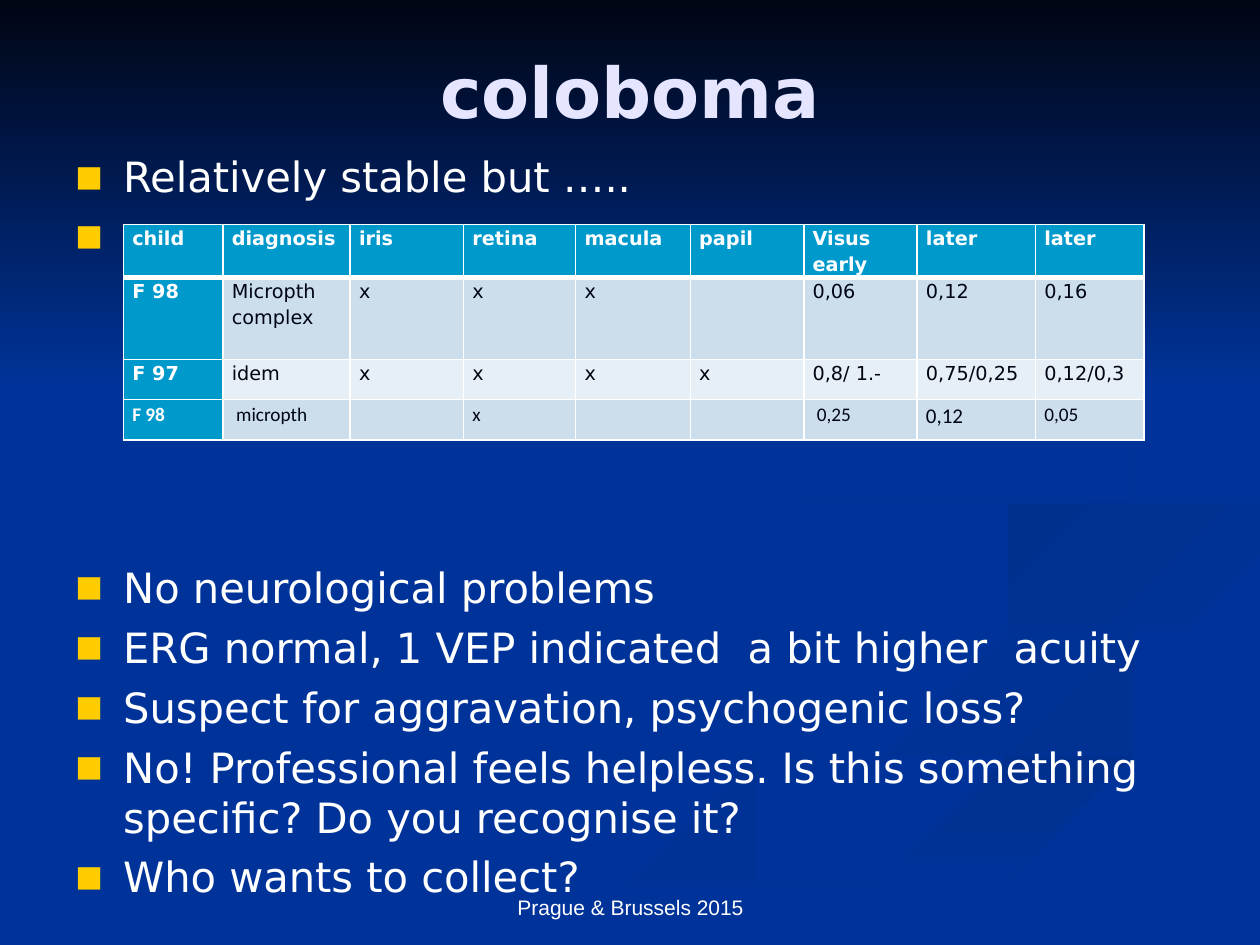
"""Build the coloboma slide: swirl background, bullet list and visual acuity table."""
from lxml.etree import SubElement
from pptx import Presentation
from pptx.dml.color import RGBColor
from pptx.enum.shapes import MSO_SHAPE
from pptx.enum.text import MSO_ANCHOR, PP_ALIGN
from pptx.oxml.ns import qn
from pptx.util import Inches, Pt

THEME = {
    "night": "000514", "blue": "003399", "shade": "002F8E", "tint": "003193",
    "title": "E5E5FF", "white": "FFFFFF", "bullet": "FFCC00",
    "head": "0099CC", "odd": "CCDEEC", "even": "E7EFF6",
    "title_size": 40, "body_size": 23.8, "cell_size": 11, "large_cell_size": 12, "footer_size": 12,
    "font": "DejaVu Sans", "footer_font": "Arial", "last_row_font": "Calibri",
}


def paint(shape, start, end, angle):
    """Fill a shape with a two-colour gradient, angle clockwise, and no outline."""
    shape.shadow.inherit = False
    shape.line.fill.background()
    shape.fill.gradient()
    shape.fill.gradient_angle = 360 - angle
    for stop, name in zip(shape.fill.gradient_stops, (start, end)):
        stop.color.rgb = RGBColor.from_string(THEME[name])


def style(para, size, color, font=THEME["font"], bold=False):
    """Format every run of a paragraph."""
    for span in para.runs:
        span.font.size = Pt(size)
        span.font.name = font
        span.font.bold = bold
        span.font.color.rgb = RGBColor.from_string(color)


deck = Presentation()
deck.slide_width, deck.slide_height = Inches(10), Inches(7.5)
page = deck.slides.add_slide(deck.slide_layouts[6])
page.background.fill.solid()
page.background.fill.fore_color.rgb = RGBColor.from_string(THEME["blue"])

swirls = [
    ("blue", "tint", 0, [
        (7.81, 5.53), (6.82, 5.19), (5.94, 4.85), (5.75, 4.59), (5.86, 4.87), (6.97, 5.25), (7.86, 5.66),
        (6.84, 6.13), (4.58, 6.74), (3, 7.49), (3.61, 7.49), (5.64, 6.65), (7.56, 6.14), (8, 5.81)]),
    ("blue", "tint", 45, [
        (9.43, 5.7), (8.7, 5.3), (7.58, 4.98), (7.24, 4.64), (7.46, 5), (8.38, 5.36), (9.18, 5.81),
        (8.94, 6.05), (9.32, 5.89)]),
    ("shade", "blue", 90, [
        (5.03, 7.49), (5.71, 7.49), (7.22, 6.82), (9.98, 6.09), (9.98, 5.81), (7.64, 6.47)]),
    ("shade", "blue", 45, [
        (7.81, 4.6), (8.26, 4.96), (8.05, 4.72), (8.78, 4.39), (9.98, 4.2), (9.98, 4.02), (8.65, 4.24)]),
    ("shade", "blue", 45, [
        (6.83, 4.3), (8.25, 4.02), (8.94, 3.44), (8.43, 2.75), (7.62, 2.33), (8.46, 2.79), (8.89, 3.35),
        (8.3, 3.82), (6.49, 4.2), (5.77, 4.62), (6.22, 5), (5.93, 4.7)]),
]
steps = 6
for start, end, angle, knots in swirls:
    limits = [(min(axis), max(axis)) for axis in zip(*knots)]
    curve = []
    for index in range(len(knots)):
        neighbours = [knots[(index + shift) % len(knots)] for shift in (-1, 0, 1, 2)]
        for step in range(steps):
            t = step / steps
            point = []
            for (a, b, c, d), (low, high) in zip(zip(*neighbours), limits):
                value = b + t * (c - a + t * (2 * a - 5 * b + 4 * c - d + t * (3 * b - a - 3 * c + d))) / 2
                point.append(min(max(value, low), high))
            curve.append(point)
    outline = page.shapes.build_freeform(*curve[0], scale=Inches(1))
    outline.add_line_segments(curve[1:], close=True)
    paint(outline.convert_to_shape(), start, end, angle)

sky = page.shapes.add_shape(MSO_SHAPE.RECTANGLE, 0, 0, Inches(10), Inches(3.08))
paint(sky, "night", "blue", 90)

captions = [
    ("coloboma", (0.5, 0.21, 9, 1.02), MSO_ANCHOR.MIDDLE,
     (THEME["title_size"], THEME["title"], THEME["font"], True)),
    ("Prague & Brussels 2015", (3.42, 6.83, 3.17, 0.52), MSO_ANCHOR.BOTTOM,
     (THEME["footer_size"], THEME["white"], THEME["footer_font"])),
]
for text, place, anchor, look in captions:
    box = page.shapes.add_textbox(*map(Inches, place))
    box.text_frame.word_wrap = True
    box.text_frame.vertical_anchor = anchor
    box.text_frame.text = text
    para = box.text_frame.paragraphs[0]
    para.alignment = PP_ALIGN.CENTER
    style(para, *look)

bullets = [
    "Relatively stable but …..",
    ".",
    "No neurological problems",
    "ERG normal, 1 VEP indicated  a bit higher  acuity",
    "Suspect for aggravation, psychogenic loss?",
    "No! Professional feels helpless. Is this something specific? Do you recognise it?",
    "Who wants to collect?",
]
body = page.shapes.add_textbox(Inches(0.5), Inches(1.15), Inches(9), Inches(5.83))
body.text_frame.word_wrap = True
body.text_frame.text = "\n".join(bullets)
for index, para in enumerate(body.text_frame.paragraphs):
    para.space_before = Pt(172 if index == 2 else 5.6)
    style(para, THEME["body_size"], THEME["white"])
    properties = para._p.get_or_add_pPr()
    properties.set("marL", str(Inches(0.38)))
    properties.set("indent", str(Inches(-0.38)))
    bullet_color = SubElement(properties, qn("a:buClr"))
    SubElement(bullet_color, qn("a:srgbClr"), val=THEME["bullet"])
    SubElement(properties, qn("a:buSzPct"), val="70000")
    SubElement(properties, qn("a:buFont"), typeface=THEME["font"])
    SubElement(properties, qn("a:buChar"), char="■")

rows = [
    ["child", "diagnosis", "iris", "retina", "macula", "papil", "Visus early", "later", "later"],
    ["F 98", "Micropth complex", "x", "x", "x", "", "0,06", "0,12", "0,16"],
    ["F 97", "idem", "x", "x", "x", "x", "0,8/ 1.-", "0,75/0,25", "0,12/0,3"],
    ["F 98", " micropth", "", "x", "", "", " 0,25", "0,12", "0,05"],
]
widths = [0.79, 1.01, 0.9, 0.89, 0.91, 0.9, 0.9, 0.94, 0.86]
heights = [0.32, 0.65, 0.32, 0.32]
frame = page.shapes.add_table(len(rows), len(widths), Inches(0.98), Inches(1.78),
                              Inches(sum(widths)), Inches(sum(heights)))
table = frame.table
for column, width in zip(table.columns, widths):
    column.width = Inches(width)
for row, height in zip(table.rows, heights):
    row.height = Inches(height)

for row_index, values in enumerate(rows):
    last = row_index == len(rows) - 1
    for column_index, value in enumerate(values):
        heading = row_index == 0 or column_index == 0
        cell = table.cell(row_index, column_index)
        cell.margin_left = cell.margin_right = Inches(0.07)
        cell.margin_top = cell.margin_bottom = 0
        cell.text_frame.text = value
        para = cell.text_frame.paragraphs[0]
        para.line_spacing = 1.15
        size = THEME["large_cell_size"] if last and column_index == 7 else THEME["cell_size"]
        style(para, size, THEME["white"] if heading else THEME["night"],
              THEME["last_row_font"] if last else THEME["font"], heading)
        properties = cell._tc.get_or_add_tcPr()
        for side in ("lnL", "lnR", "lnT", "lnB"):
            thick = (row_index, side) in ((0, "lnB"), (1, "lnT"))
            border = SubElement(properties, qn("a:" + side), w=str(Pt(3 if thick else 1)))
            line_fill = SubElement(border, qn("a:solidFill"))
            SubElement(line_fill, qn("a:srgbClr"), val=THEME["white"])
        cell.fill.solid()
        shade = "head" if heading else "odd" if row_index % 2 else "even"
        cell.fill.fore_color.rgb = RGBColor.from_string(THEME[shade])

deck.save("out.pptx")
